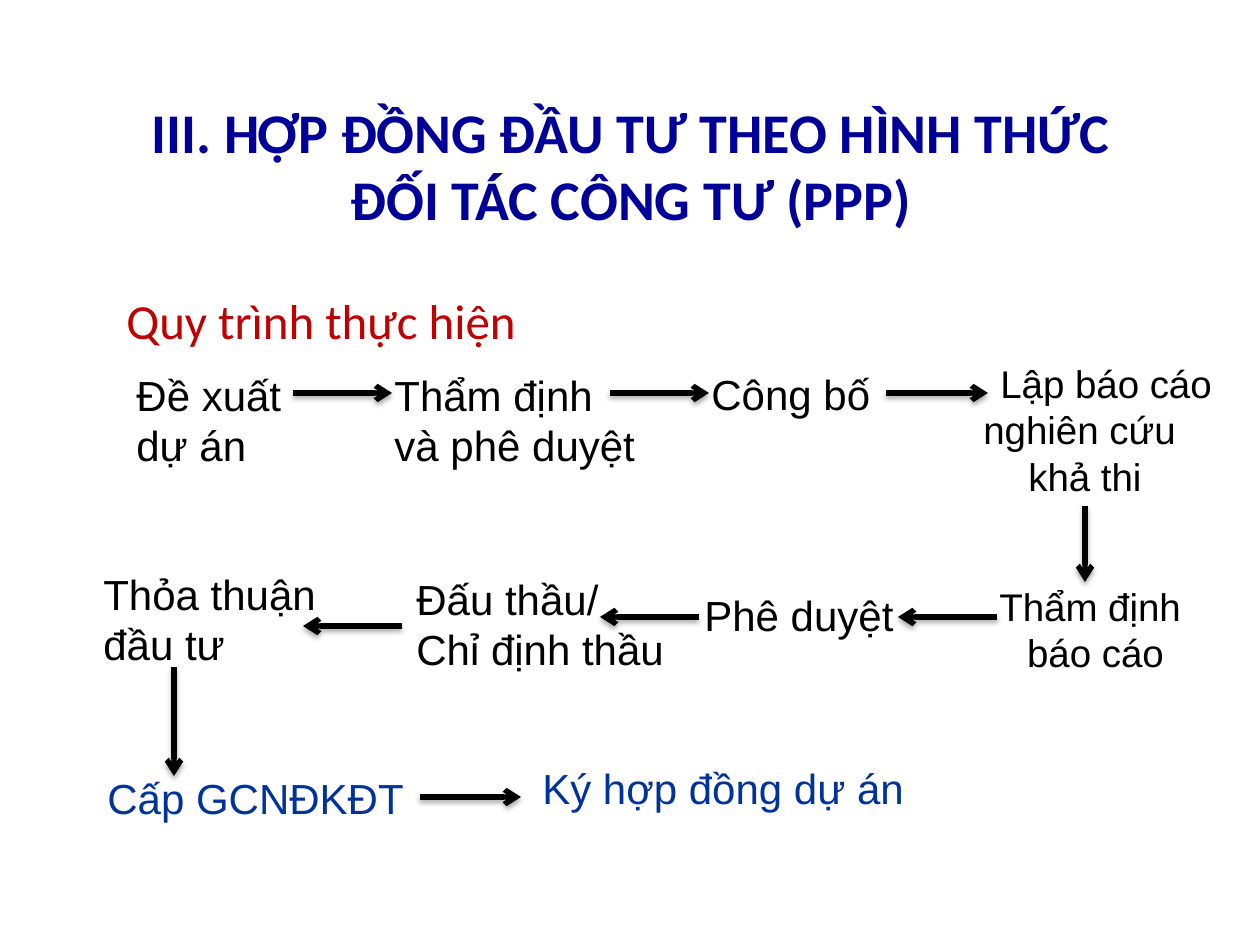
from dataclasses import dataclass

from lxml import etree
from pptx import Presentation
from pptx.dml.color import RGBColor
from pptx.enum.shapes import MSO_CONNECTOR
from pptx.enum.text import MSO_ANCHOR, PP_ALIGN
from pptx.oxml.ns import qn
from pptx.util import Emu, Pt

LEFT, CENTER = PP_ALIGN.LEFT, PP_ALIGN.CENTER
TOP, MIDDLE = MSO_ANCHOR.TOP, MSO_ANCHOR.MIDDLE
STRAIGHT = MSO_CONNECTOR.STRAIGHT
SCALE = 914400 / 126
BOTTOM, RIGHT = 2, 3


@dataclass(frozen=True)
class Theme:
    navy: str = "000099"
    red: str = "C00000"
    black: str = "000000"
    blue: str = "003399"
    title: int = 32
    head: int = 28
    step: int = 24
    small: int = 22
    line: int = 3
    sans: str = "Calibri"
    body: str = "Arial"


THEME = Theme()


def px(size):
    return Emu(round(size * SCALE))


def add_text(slide, area, lines, size, color, font=THEME.body, bold=False,
             align=LEFT, anchor=TOP, wrap=False, indent=0):
    box = slide.shapes.add_textbox(*map(px, area))
    frame = box.text_frame
    frame.word_wrap = wrap
    frame.vertical_anchor = anchor
    for i, line in enumerate(lines):
        para = frame.add_paragraph() if i else frame.paragraphs[0]
        para.alignment = align
        if indent and not i:
            props = para._p.get_or_add_pPr()
            props.set("marL", str(px(indent)))
            props.set("indent", "0")
        for j, part in enumerate(line.split("\n")):
            if j:
                para.add_line_break()
            run = para.add_run()
            run.text = part
            run.font.name = font
            run.font.size = Pt(size)
            run.font.bold = bold
            run.font.color.rgb = RGBColor.from_string(color)
    return box


def add_step(slide, area, lines, color=THEME.black):
    return add_text(slide, area, lines, THEME.step, color)


def add_note(slide, area, lines, **style):
    return add_text(slide, area, lines, THEME.small, THEME.black,
                    align=CENTER, wrap=True, **style)


def add_shade(props):
    effects = etree.SubElement(props, qn("a:effectLst"))
    shade = etree.SubElement(
        effects, qn("a:outerShdw"), blurRad=str(Pt(3.1)),
        dist=str(Pt(1.8)), dir="5400000", rotWithShape="0")
    color = etree.SubElement(shade, qn("a:srgbClr"), val=THEME.black)
    etree.SubElement(color, qn("a:alpha"), val="35000")


def add_arrow(slide, start, end, box=None, side=None):
    arrow = slide.shapes.add_connector(STRAIGHT, *map(px, start + end))
    arrow.line.width = Pt(THEME.line)
    arrow.line.color.rgb = RGBColor.from_string(THEME.black)
    etree.SubElement(arrow.line._get_or_add_ln(), qn("a:tailEnd"), type="arrow")
    add_shade(arrow._element.spPr)
    if box is not None:
        arrow.begin_connect(box, side)


def main():
    deck = Presentation()
    deck.slide_width, deck.slide_height = px(1260), px(945)
    slide = deck.slides.add_slide(deck.slide_layouts[6])

    add_text(slide, (64, 86, 1134, 157),
             ["III. HỢP ĐỒNG ĐẦU TƯ THEO HÌNH THỨC\nĐỐI TÁC CÔNG TƯ (PPP)"],
             THEME.title, THEME.navy, THEME.sans, bold=True,
             align=CENTER, anchor=MIDDLE, wrap=True)
    add_text(slide, (114, 284, 1091, 72), ["Quy trình thực hiện"],
             THEME.head, THEME.red, THEME.sans, wrap=True)

    add_step(slide, (124, 363, 184, 114), ["Đề xuất", "dự án"])
    add_step(slide, (382, 363, 268, 114), ["Thẩm định", "và phê duyệt"])
    notice = add_step(slide, (699, 362, 187, 62), ["Công bố"])
    report = add_note(slide, (933, 354, 304, 152),
                      ["Lập báo cáo ", "nghiên cứu ", "khả thi"], indent=53)
    add_note(slide, (985, 577, 221, 106), ["Thẩm định ", "báo cáo"])
    add_step(slide, (692, 583, 217, 63), ["Phê duyệt"])
    add_step(slide, (404, 567, 276, 114), ["Đấu thầu/", "Chỉ định thầu"])
    add_step(slide, (91, 562, 252, 114), ["Thỏa thuận", "đầu tư"])
    permit = add_step(slide, (95, 766, 325, 62), ["Cấp GCNĐKĐT"], THEME.blue)
    add_step(slide, (530, 756, 391, 63), ["Ký hợp đồng dự án"], THEME.blue)

    add_arrow(slide, (293, 393), (392, 393))
    add_arrow(slide, (610, 393), (709, 393))
    add_arrow(slide, (886, 393), (988, 393), notice, RIGHT)
    add_arrow(slide, (1085, 506), (1085, 582), report, BOTTOM)
    add_arrow(slide, (997, 617), (898, 617))
    add_arrow(slide, (699, 617), (600, 617))
    add_arrow(slide, (402, 626), (303, 626))
    add_arrow(slide, (174, 667), (174, 776))
    add_arrow(slide, (420, 797), (521, 797), permit, RIGHT)

    deck.save("out.pptx")


if __name__ == "__main__":
    main()
